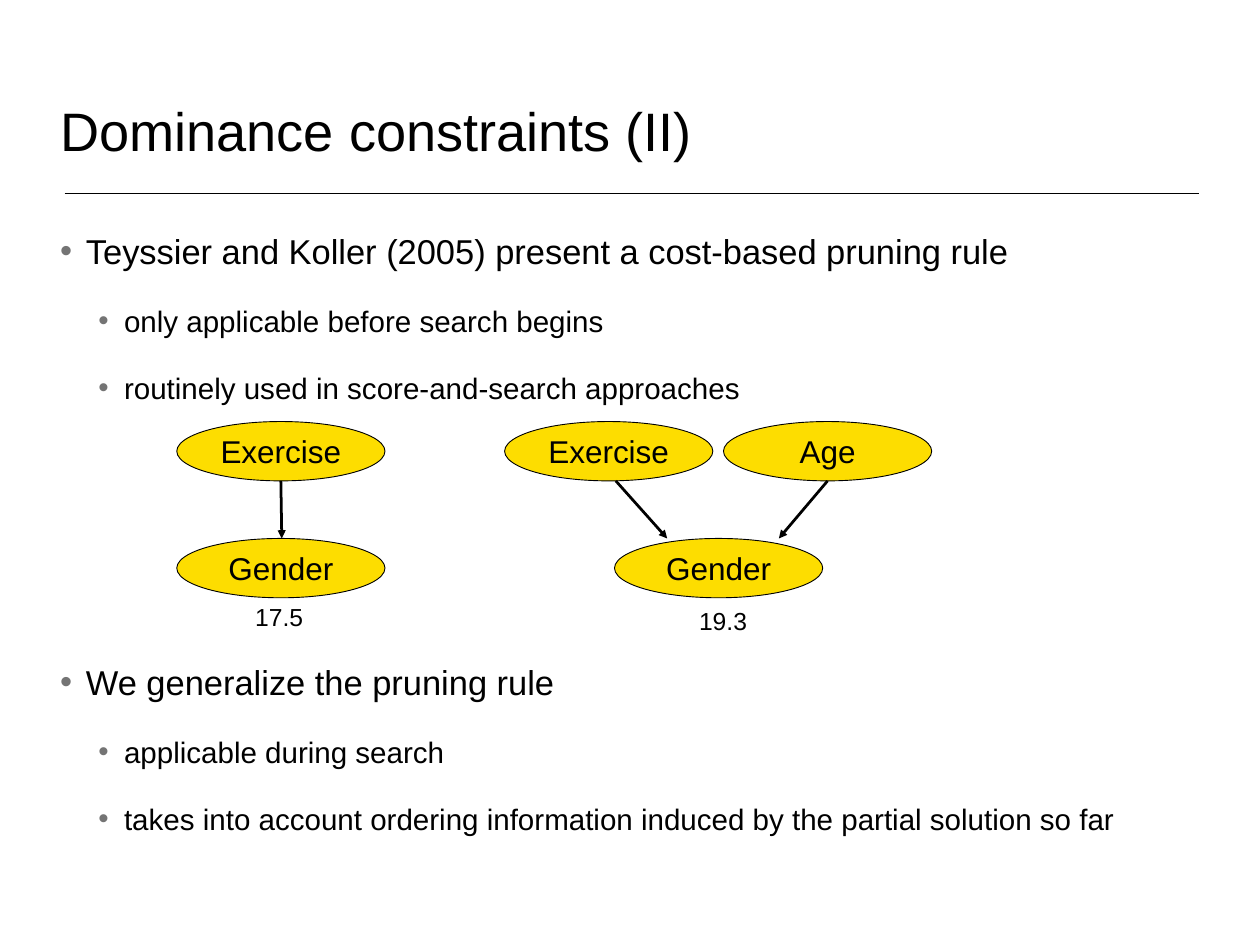
import pptx
import pptx.util
import pptx.dml.color
import pptx.enum.shapes
import pptx.enum.text
import pptx.oxml
import pptx.oxml.ns

Inches, Pt = pptx.util.Inches, pptx.util.Pt
RGBColor = pptx.dml.color.RGBColor
MSO_SHAPE = pptx.enum.shapes.MSO_SHAPE
STRAIGHT = pptx.enum.shapes.MSO_CONNECTOR.STRAIGHT
ANCHOR = pptx.enum.text.MSO_ANCHOR
ALIGN = pptx.enum.text.PP_ALIGN

# Content
TITLE = "Dominance constraints (II)"
DIAGRAM_GAP = 208  # points left above a bullet for the graphs
BULLETS = [  # text, level, space before in points
    ("Teyssier and Koller (2005) present a cost-based pruning rule", 0, 24),
    ("only applicable before search begins", 1, 25.5),
    ("routinely used in score-and-search approaches", 1, 25.5),
    ("We generalize the pruning rule", 0, DIAGRAM_GAP),
    ("applicable during search", 1, 25.5),
    ("takes into account ordering information induced by the partial solution so far", 1, 25.5),
]
LEVELS = [(28, 0.29), (24, 0.72)]  # size, left margin
HANGING = 0.29
# Each graph: child and its centre, parents with centre, arrow start and end, cost and its top
GRAPHS = [
    {"child": ("Gender", 3.17), "cost": ("17.5", 3.15, 6.75),
     "parents": [("Exercise", 3.17, 3.17, 3.18)]},
    {"child": ("Gender", 8.11), "cost": ("19.3", 8.16, 6.79),
     "parents": [("Exercise", 6.87, 6.95, 7.53), ("Age", 9.34, 9.34, 8.79)]},
]

# Style and layout
BLACK = RGBColor(0x00, 0x00, 0x00)
GREY = RGBColor(0x74, 0x74, 0x74)
YELLOW = RGBColor(0xFD, 0xDD, 0x00)
FONT = "Arial"
SLIDE_W, SLIDE_H = 14.22, 10.67
MARGIN, TEXT_W = 0.62, 12.97
NODE_W, NODE_H = 2.35, 0.67
PARENT_TOP, CHILD_TOP = 4.76, 6.08
COST_W, COST_H = 0.75, 0.44


def style(paragraph, size):
    for run in paragraph.runs:
        run.font.name, run.font.size = FONT, Pt(size)
        run.font.color.rgb = BLACK


def place(placeholder, top, height, anchor):
    placeholder.left, placeholder.top = Inches(MARGIN), Inches(top)
    placeholder.width, placeholder.height = Inches(TEXT_W), Inches(height)
    frame = placeholder.text_frame
    frame.margin_left = frame.margin_right = Inches(0.06)
    frame.margin_top = frame.margin_bottom = Inches(0.06)
    frame.vertical_anchor = anchor
    frame.auto_size = pptx.enum.text.MSO_AUTO_SIZE.NONE
    return frame


def add_bullet(paragraph, left):
    props = paragraph._p.get_or_add_pPr()
    props.set("marL", str(Inches(left)))
    props.set("indent", str(-Inches(HANGING)))
    ns = pptx.oxml.ns.nsdecls("a")
    for xml in (f'<a:buClr {ns}><a:srgbClr val="{GREY}"/></a:buClr>',
                f'<a:buFont {ns} typeface="{FONT}"/>',
                f'<a:buChar {ns} char="•"/>'):
        props.append(pptx.oxml.parse_xml(xml))


def add_line(x1, y1, x2, y2, width, arrow=False):
    line = slide.shapes.add_connector(
        STRAIGHT, Inches(x1), Inches(y1), Inches(x2), Inches(y2))
    line.line.color.rgb, line.line.width = BLACK, Pt(width)
    ns = pptx.oxml.ns.nsdecls("a")
    if arrow:
        line.line._get_or_add_ln().append(
            pptx.oxml.parse_xml(f'<a:tailEnd {ns} type="triangle"/>'))
    line._element.spPr.append(pptx.oxml.parse_xml(f"<a:effectLst {ns}/>"))


def write_centred(shape, text, size, anchor):
    frame = shape.text_frame
    frame.text = text
    frame.word_wrap = False
    frame.vertical_anchor = anchor
    frame.paragraphs[0].alignment = ALIGN.CENTER
    style(frame.paragraphs[0], size)


def add_node(text, centre, top):
    node = slide.shapes.add_shape(
        MSO_SHAPE.OVAL, Inches(centre - NODE_W / 2), Inches(top),
        Inches(NODE_W), Inches(NODE_H))
    node.shadow.inherit = False
    node.fill.solid()
    node.fill.fore_color.rgb = YELLOW
    node.line.color.rgb, node.line.width = BLACK, Pt(0.75)
    write_centred(node, text, 25.6, ANCHOR.MIDDLE)


deck = pptx.Presentation()
deck.slide_width, deck.slide_height = Inches(SLIDE_W), Inches(SLIDE_H)
slide = deck.slides.add_slide(deck.slide_layouts[1])

# Title and rule
heading = place(slide.shapes.title, 0.36, 1.53, ANCHOR.BOTTOM)
heading.text = TITLE
heading.paragraphs[0].alignment = ALIGN.LEFT
style(heading.paragraphs[0], 44)
add_line(0.73, 2.18, 13.53, 2.18, 0.75)

# Bullet list
points = place(slide.placeholders[1], 2.54, 7.18, ANCHOR.TOP)
points.text = "\n".join(text for text, _, _ in BULLETS)
for point, (_, level, space) in zip(points.paragraphs, BULLETS):
    size, left = LEVELS[level]
    point.level = level
    point.space_before = Pt(space)
    add_bullet(point, left)
    style(point, size)

# Graphs with their costs
for graph in GRAPHS:
    add_node(*graph["child"], CHILD_TOP)
    for parent, centre, start, end in graph["parents"]:
        add_node(parent, centre, PARENT_TOP)
        add_line(start, PARENT_TOP + NODE_H, end, CHILD_TOP, 2.25, arrow=True)
    cost, centre, top = graph["cost"]
    cost_label = slide.shapes.add_textbox(
        Inches(centre - COST_W / 2), Inches(top), Inches(COST_W), Inches(COST_H))
    write_centred(cost_label, cost, 20, ANCHOR.TOP)

deck.save("out.pptx")
